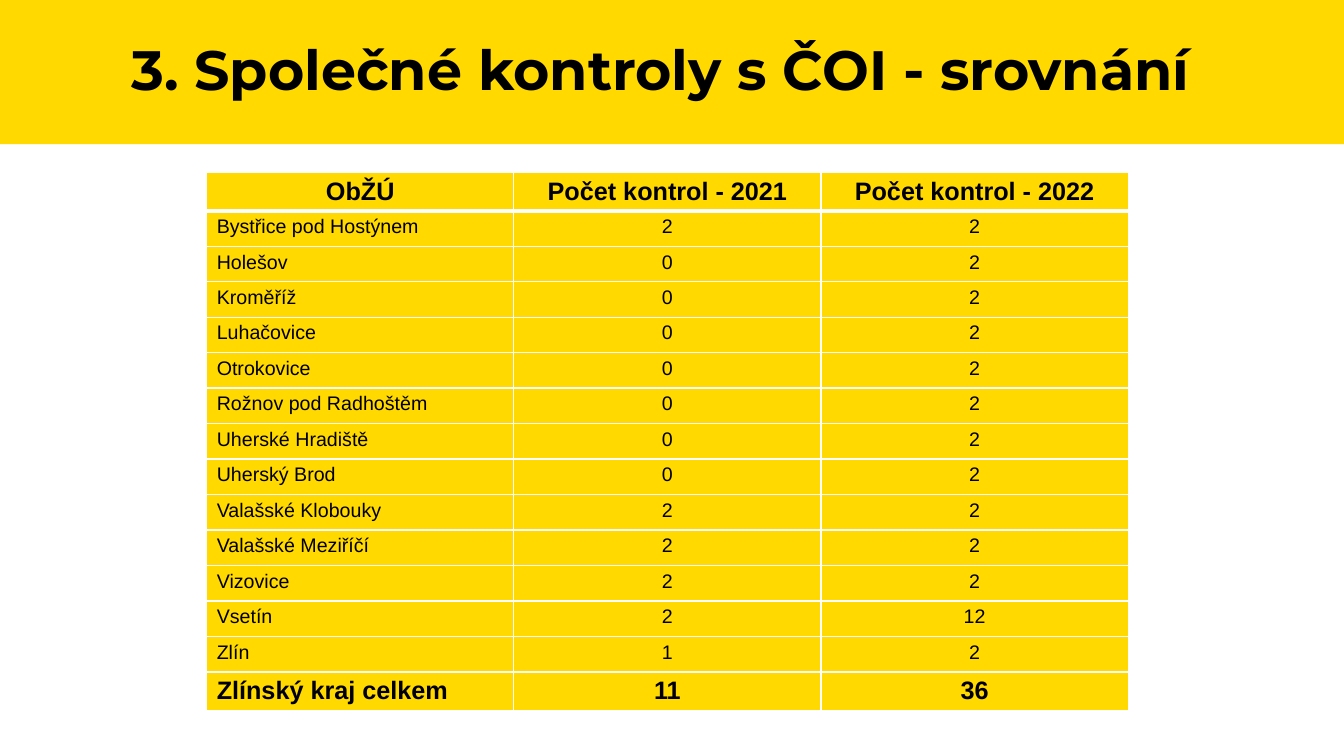
"""Builds the slide that compares joint inspections by office in 2021 and 2022."""
from lxml.etree import SubElement
from pptx import Presentation
from pptx.dml.color import RGBColor
from pptx.enum.shapes import MSO_SHAPE
from pptx.enum.text import MSO_ANCHOR, MSO_AUTO_SIZE, PP_ALIGN
from pptx.oxml.ns import qn
from pptx.util import Inches, Pt

YELLOW, BLACK, WHITE = "FFD900", "000000", "FFFFFF"
HEADER = ("ObŽÚ", "Počet kontrol - 2021", "Počet kontrol - 2022")
OFFICES = [
    ("Bystřice pod Hostýnem", 2, 2),
    ("Holešov", 0, 2),
    ("Kroměříž", 0, 2),
    ("Luhačovice", 0, 2),
    ("Otrokovice", 0, 2),
    ("Rožnov pod Radhoštěm", 0, 2),
    ("Uherské Hradiště", 0, 2),
    ("Uherský Brod", 0, 2),
    ("Valašské Klobouky", 2, 2),
    ("Valašské Meziříčí", 2, 2),
    ("Vizovice", 2, 2),
    ("Vsetín", 2, 12),
    ("Zlín", 1, 2),
]
TOTAL = ("Zlínský kraj celkem", 11, 36)


def paint(fill, color):
    """Give a fill one solid colour."""
    fill.solid()
    fill.fore_color.rgb = RGBColor.from_string(color)


def format_text(frame, font, size, bold, align):
    """Format the single paragraph of a text frame."""
    para = frame.paragraphs[0]
    para.alignment = align
    for span in para.runs:
        span.font.name = font
        span.font.size = Pt(size)
        span.font.bold = bold
        span.font.color.rgb = RGBColor.from_string(BLACK)


def add_band(slide, width):
    """Draw the yellow band behind the title."""
    band = slide.shapes.add_shape(MSO_SHAPE.RECTANGLE, 0, 0, width, Inches(1.43))
    band.shadow.inherit = False
    paint(band.fill, YELLOW)
    band.line.fill.background()
    slide.shapes._spTree.insert(2, band._element)


def set_title(slide, text):
    """Place and format the title."""
    title = slide.shapes.title
    title.left, title.top = Inches(0.46), Inches(0.37)
    title.width, title.height = Inches(12.18), Inches(1.1)
    frame = title.text_frame
    frame.text = text
    frame.word_wrap = True
    frame.auto_size = MSO_AUTO_SIZE.NONE
    frame.vertical_anchor = MSO_ANCHOR.TOP
    frame.paragraphs[0].line_spacing = 0.9
    format_text(frame, "Montserrat", 39.6, True, PP_ALIGN.CENTER)


def set_borders(cell, bottom, top):
    """Draw white borders around a cell."""
    properties = cell._tc.get_or_add_tcPr()
    for side, points in (("L", 1), ("R", 1), ("T", top), ("B", bottom)):
        line = SubElement(properties, qn(f"a:ln{side}"), w=str(Pt(points)))
        solid = SubElement(line, qn("a:solidFill"))
        SubElement(solid, qn("a:srgbClr"), val=WHITE)


def add_inspection_table(slide):
    """Add the table with its header, offices and total."""
    rows = [HEADER, *OFFICES, TOTAL]
    table = slide.shapes.add_table(
        len(rows), len(HEADER), Inches(2.05), Inches(1.71), Inches(9.14), Inches(5.28)
    ).table
    table.horz_banding = False
    for i, values in enumerate(rows):
        strong = values in (HEADER, TOTAL)
        for j, value in enumerate(values):
            cell = table.cell(i, j)
            cell.text = str(value)
            set_borders(cell, 3 if i == 0 else 1, 3 if i == 1 else 1)
            paint(cell.fill, YELLOW)
            align = PP_ALIGN.LEFT if i and j == 0 else PP_ALIGN.CENTER
            format_text(cell.text_frame, "Arial", 18 if strong else 14, strong, align)


def main():
    """Build and save the deck."""
    deck = Presentation()
    deck.slide_width, deck.slide_height = Inches(13.33), Inches(7.5)
    slide = deck.slides.add_slide(deck.slide_layouts[5])
    add_band(slide, deck.slide_width)
    set_title(slide, "3. Společné kontroly s ČOI - srovnání")
    add_inspection_table(slide)
    deck.save("out.pptx")


if __name__ == "__main__":
    main()
